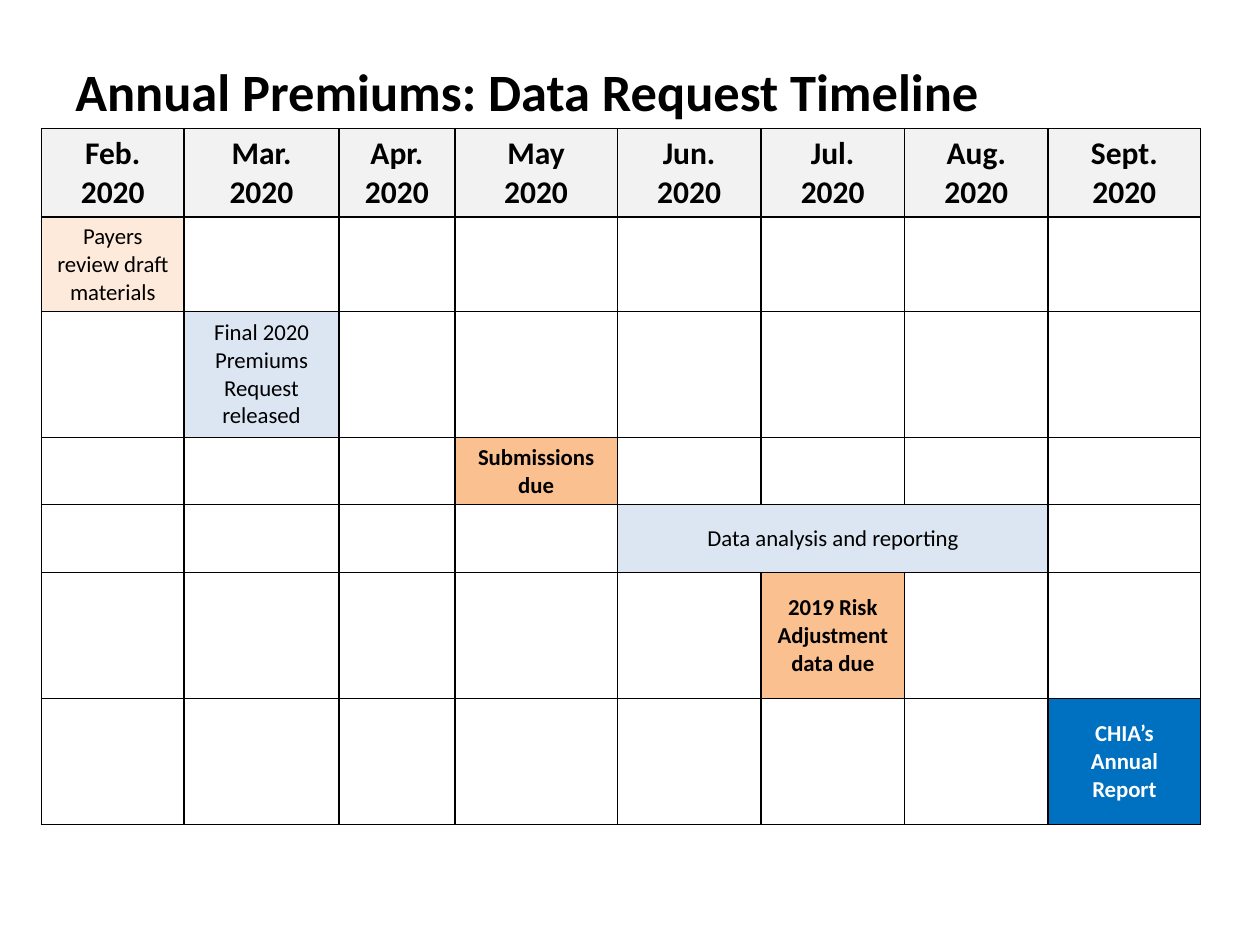
from lxml import etree
from pptx import Presentation
from pptx.dml.color import RGBColor
from pptx.enum import text
from pptx.oxml.ns import qn
from pptx.util import Inches, Pt

FONT = "Calibri"
BLACK = RGBColor(0x00, 0x00, 0x00)
WHITE = RGBColor(0xFF, 0xFF, 0xFF)
HEADER_GREY = RGBColor(0xF2, 0xF2, 0xF2)
PALE_ORANGE = RGBColor(0xFD, 0xEA, 0xDA)
PALE_BLUE = RGBColor(0xDC, 0xE6, 0xF2)
ORANGE = RGBColor(0xFA, 0xC0, 0x90)
REPORT_BLUE = RGBColor(0x00, 0x70, 0xC0)

MONTHS = ["Feb. 2020", "Mar. 2020", "Apr. 2020", "May\n2020",
          "Jun. 2020", "Jul.\n2020", "Aug. 2020", "Sept. 2020"]
MONTH_WIDTHS = [1.13, 1.23, 0.92, 1.29, 1.14, 1.14, 1.14, 1.21]
ROW_HEIGHTS = [0.67, 0.74, 1, 0.51, 0.54, 1, 1]

# One milestone per row: first month, last month, wording, fill, bold, colour
MILESTONES = [
    (0, 0, "Payers review draft materials", PALE_ORANGE, False, BLACK),
    (1, 1, "Final 2020 Premiums Request\nreleased", PALE_BLUE, False, BLACK),
    (3, 3, "Submissions due", ORANGE, True, BLACK),
    (4, 6, "Data analysis and reporting", PALE_BLUE, False, BLACK),
    (5, 5, "2019 Risk Adjustment data due", ORANGE, True, BLACK),
    (7, 7, "CHIA’s Annual Report", REPORT_BLUE, True, WHITE),
]


def style_paragraph(paragraph, size, bold, color):
    paragraph.font.name = FONT
    paragraph.font.size = Pt(size)
    paragraph.font.bold = bold
    paragraph.font.color.rgb = color


def add_title(slide, wording):
    title = slide.shapes.add_textbox(Inches(0.5), Inches(0.42), Inches(8.5), Inches(0.61))
    frame = title.text_frame
    frame.word_wrap = True
    frame.text = wording
    style_paragraph(frame.paragraphs[0], 30, True, BLACK)


def add_borders(cell):
    properties = cell._tc.get_or_add_tcPr()
    for position, side in enumerate(("a:lnL", "a:lnR", "a:lnT", "a:lnB")):
        border = etree.Element(qn(side), w=str(Pt(1)))
        solid = etree.SubElement(border, qn("a:solidFill"))
        etree.SubElement(solid, qn("a:srgbClr"), val=str(BLACK))
        properties.insert(position, border)


def fill_cell(cell, wording, fill, size, bold, color):
    cell.text = wording
    cell.vertical_anchor = text.MSO_ANCHOR.MIDDLE
    cell.fill.solid()
    cell.fill.fore_color.rgb = fill
    for paragraph in cell.text_frame.paragraphs:
        paragraph.alignment = text.PP_ALIGN.CENTER
        style_paragraph(paragraph, size, bold, color)


def add_timeline(slide):
    timeline = slide.shapes.add_table(
        len(ROW_HEIGHTS), len(MONTHS), Inches(0.33), Inches(1.02),
        Inches(sum(MONTH_WIDTHS)), Inches(sum(ROW_HEIGHTS))).table
    timeline.horz_banding = False
    for column, width in zip(timeline.columns, MONTH_WIDTHS):
        column.width = Inches(width)
    for row, height in zip(timeline.rows, ROW_HEIGHTS):
        row.height = Inches(height)

    # Plain bordered grid
    for cell in timeline.iter_cells():
        cell.fill.background()
        add_borders(cell)

    # Month headings
    for column, month in enumerate(MONTHS):
        fill_cell(timeline.cell(0, column), month, HEADER_GREY, 18, True, BLACK)

    # Milestones
    for row, (first, last, wording, fill, bold, color) in enumerate(MILESTONES, 1):
        cell = timeline.cell(row, first)
        if last > first:
            cell.merge(timeline.cell(row, last))
        fill_cell(cell, wording, fill, 13, bold, color)


def main():
    presentation = Presentation()
    presentation.slide_width = Inches(10)
    presentation.slide_height = Inches(7.5)
    slide = presentation.slides.add_slide(presentation.slide_layouts[6])
    add_title(slide, "Annual Premiums: Data Request Timeline")
    add_timeline(slide)
    presentation.save("out.pptx")


if __name__ == "__main__":
    main()
